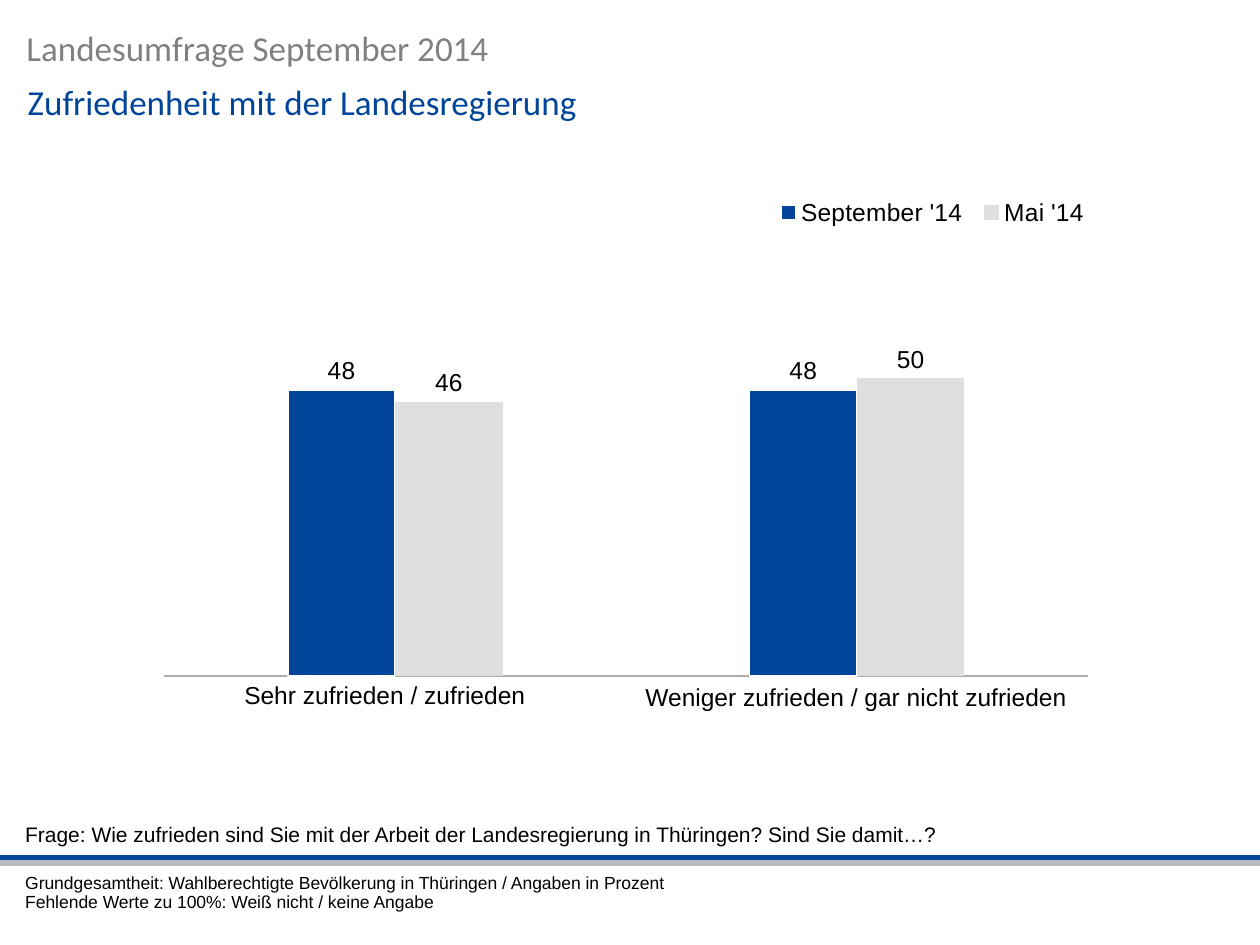
"""Build a survey slide on satisfaction with the state government."""
from dataclasses import dataclass

from lxml.etree import SubElement
from pptx import Presentation
from pptx.chart.data import CategoryChartData
from pptx.dml.color import RGBColor
from pptx.enum.chart import (XL_CHART_TYPE, XL_LABEL_POSITION, XL_LEGEND_POSITION,
                             XL_TICK_LABEL_POSITION, XL_TICK_MARK)
from pptx.enum.shapes import MSO_CONNECTOR
from pptx.enum.text import MSO_ANCHOR, MSO_AUTO_SIZE, PP_ALIGN
from pptx.oxml import parse_xml
from pptx.oxml.ns import qn
from pptx.util import Inches, Pt

COLORS = {"blue": "004599", "gray": "808080", "rule": "B7BCC1", "axis": "ADADAD",
          "bar": "DFDFDF", "black": "000000", "white": "FFFFFF"}
CHART_NS = "http://schemas.openxmlformats.org/drawingml/2006/chart"


@dataclass
class TextBlock:
    lines: list[str]
    left: float
    top: float
    width: float
    height: float
    size: int
    font: str = "Arial"
    color: str = "black"
    anchor: MSO_ANCHOR = MSO_ANCHOR.TOP
    spacing: float = 1.0


@dataclass
class BarSeries:
    name: str
    values: tuple[int, int]
    color: str
    outlined: bool


@dataclass
class Answer:
    label: str
    width: float
    spacing: float


HEADER = TextBlock(["Landesumfrage September 2014"], 0.21, 0.21, 8.36, 0.43, 20,
                   "Calibri", "gray")
TITLE = TextBlock(["Zufriedenheit mit der Landesregierung"], 0.22, 0.64, 8.54, 0.8, 20,
                  "Calibri", "blue")
QUESTION = TextBlock(["Frage: Wie zufrieden sind Sie mit der Arbeit der Landesregierung "
                      "in Thüringen? Sind Sie damit…?"],
                     0.2, 6.11, 9.63, 0.61, 12, anchor=MSO_ANCHOR.BOTTOM)
FOOTNOTE = TextBlock(["Grundgesamtheit: Wahlberechtigte Bevölkerung in Thüringen / "
                      "Angaben in Prozent",
                      "Fehlende Werte zu 100%: Weiß nicht / keine Angabe"],
                     0.2, 6.94, 7.61, 0.49, 10, spacing=0.9)
SERIES = [BarSeries("September '14", (48, 48), "blue", True),
          BarSeries("Mai '14", (46, 50), "bar", False)]
ANSWERS = [Answer("Sehr zufrieden / zufrieden", 3.65, 0.9),
           Answer("Weniger zufrieden / gar nicht zufrieden", 3.83, 1.0)]


def rgb(name: str) -> RGBColor:
    return RGBColor.from_string(COLORS[name])


def style_font(font, size: int, name: str = "Arial", color: str = "black") -> None:
    font.size, font.name, font.bold = Pt(size), name, False
    font.color.rgb = rgb(color)


def fill_text(shape, block: TextBlock) -> None:
    shape.left, shape.top = Inches(block.left), Inches(block.top)
    shape.width, shape.height = Inches(block.width), Inches(block.height)
    frame = shape.text_frame
    frame.text = "\n".join(block.lines)
    frame.word_wrap, frame.auto_size = True, MSO_AUTO_SIZE.NONE
    frame.vertical_anchor = block.anchor
    frame.margin_left = frame.margin_right = frame.margin_top = frame.margin_bottom = 0
    for paragraph in frame.paragraphs:
        paragraph.alignment = PP_ALIGN.LEFT
        paragraph.line_spacing = block.spacing
        style_font(paragraph.font, block.size, block.font, block.color)


def add_text(slide, block: TextBlock) -> None:
    fill_text(slide.shapes.add_textbox(0, 0, 0, 0), block)


def add_rule(slide, top: float, color: str) -> None:
    line = slide.shapes.add_connector(MSO_CONNECTOR.STRAIGHT, 0, Inches(top),
                                      Inches(10), Inches(top))
    line.line.color.rgb, line.line.width = rgb(color), Pt(3)
    SubElement(line._element.spPr, qn("a:effectLst"))


def set_layout(element, index: int, target: str, x: float, y: float,
               width: float, height: float) -> None:
    for old in element.findall(qn("c:layout")):
        element.remove(old)
    places = "".join(f'<c:{tag} val="{value}"/>' for tag, value in
                     (("xMode", "edge"), ("yMode", "edge"), ("x", x), ("y", y),
                      ("w", width), ("h", height)))
    element.insert(index, parse_xml(
        f'<c:layout xmlns:c="{CHART_NS}"><c:manualLayout>{target}{places}'
        "</c:manualLayout></c:layout>"))


def add_bar_chart(slide) -> None:
    data = CategoryChartData(number_format="0")
    data.categories = ["1", "2"]
    for item in SERIES:
        data.add_series(item.name, item.values)
    chart = slide.shapes.add_chart(XL_CHART_TYPE.COLUMN_CLUSTERED, Inches(1.23), Inches(0.64),
                                   Inches(7.48), Inches(4.87), data).chart
    style_font(chart.font, 14)
    chart.has_title = False
    for axis in (chart.category_axis, chart.value_axis):
        axis.major_tick_mark = axis.minor_tick_mark = XL_TICK_MARK.NONE
        axis.tick_label_position = XL_TICK_LABEL_POSITION.NONE
        axis.has_major_gridlines = False
    chart.category_axis.format.line.color.rgb = rgb("axis")
    chart.category_axis.format.line.width = Pt(1)
    values = chart.value_axis
    values.minimum_scale, values.maximum_scale, values.major_unit = 0, 100, 20
    values.format.line.fill.background()

    plot = chart.plots[0]
    plot.gap_width, plot.overlap, plot.vary_by_categories = 230, 0, False
    for series, item in zip(plot.series, SERIES):
        series.format.fill.solid()
        series.format.fill.fore_color.rgb = rgb(item.color)
        if item.outlined:
            series.format.line.color.rgb, series.format.line.width = rgb("white"), Pt(1)
        labels = series.data_labels
        labels.show_value, labels.position = True, XL_LABEL_POSITION.OUTSIDE_END
        labels.number_format, labels.number_format_is_linked = "0", False
        style_font(labels.font, 14)

    chart.has_legend = True
    chart.legend.position = XL_LEGEND_POSITION.RIGHT
    chart.legend.include_in_layout = False
    style_font(chart.legend.font, 14)
    set_layout(chart.legend._element, 1, "", 0.65, 0.18, 0.36, 0.07)
    plot_area = chart._chartSpace.chart.plotArea
    set_layout(plot_area, 0, '<c:layoutTarget val="inner"/>', 0.01, 0, 0.98, 0.97)


def add_answer_table(slide) -> None:
    table = slide.shapes.add_table(1, len(ANSWERS), Inches(1.23), Inches(5.39),
                                   Inches(7.48), Inches(0.52)).table
    table.first_row = table.horz_banding = False
    for index, answer in enumerate(ANSWERS):
        table.columns[index].width = Inches(answer.width)
        cell = table.cell(0, index)
        cell.fill.background()
        cell.margin_left = cell.margin_right = Inches(0.04)
        cell.margin_top = cell.margin_bottom = Inches(0.04)
        cell.text = answer.label
        paragraph = cell.text_frame.paragraphs[0]
        paragraph.alignment, paragraph.line_spacing = PP_ALIGN.CENTER, answer.spacing
        style_font(paragraph.font, 14)


def main() -> None:
    presentation = Presentation()
    presentation.slide_width, presentation.slide_height = Inches(10), Inches(7.5)
    slide = presentation.slides.add_slide(presentation.slide_layouts[5])
    add_text(slide, HEADER)
    add_rule(slide, 6.81, "blue")
    add_rule(slide, 6.85, "rule")
    add_text(slide, QUESTION)
    add_bar_chart(slide)
    fill_text(slide.shapes.title, TITLE)
    add_answer_table(slide)
    add_text(slide, FOOTNOTE)
    presentation.save("out.pptx")


if __name__ == "__main__":
    main()
